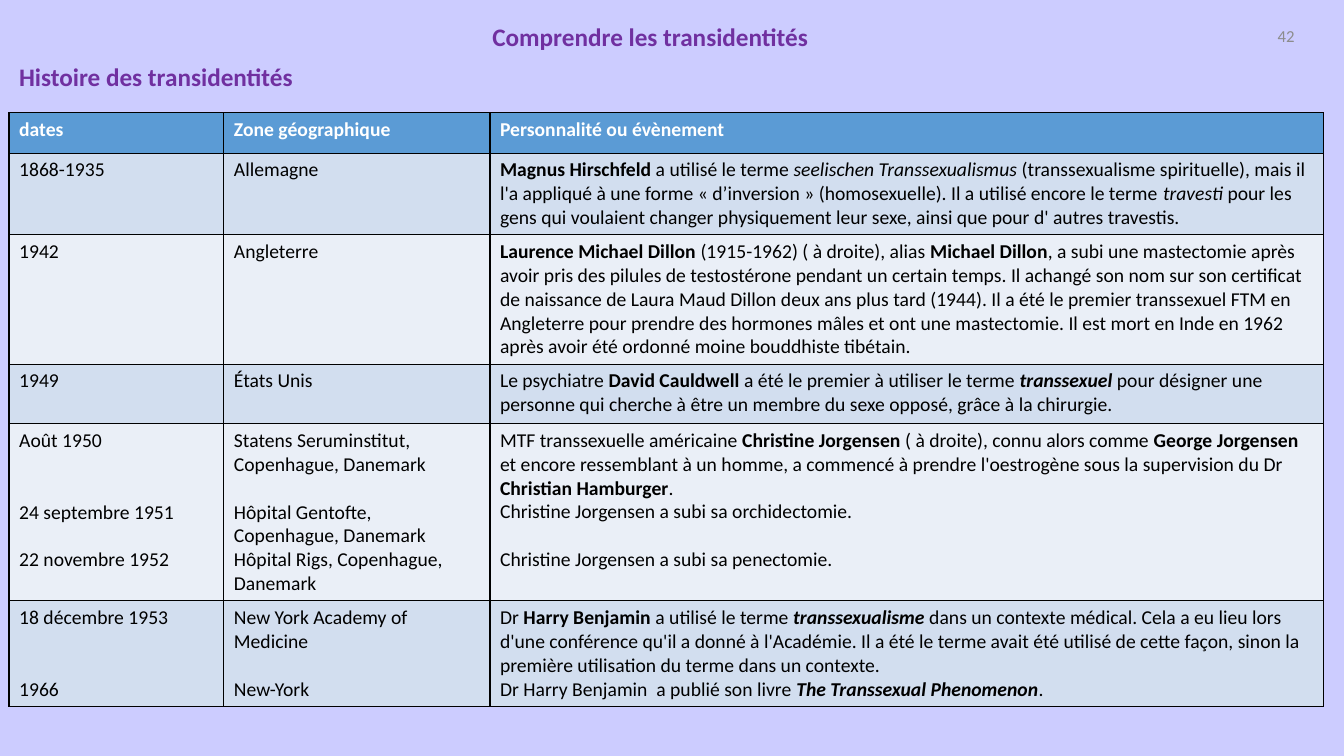
from lxml import etree
from pptx import Presentation
from pptx.dml.color import RGBColor
from pptx.enum.text import MSO_ANCHOR, MSO_AUTO_SIZE, PP_ALIGN
from pptx.oxml.ns import qn
from pptx.util import Inches, Pt

LEFT, CENTER, RIGHT = PP_ALIGN.LEFT, PP_ALIGN.CENTER, PP_ALIGN.RIGHT
TOP, MIDDLE = MSO_ANCHOR.TOP, MSO_ANCHOR.MIDDLE
NO_FIT = MSO_AUTO_SIZE.NONE
FONT = "Calibri"
PURPLE, BLACK = "7030A0", "000000"
LINE = 17.1  # height of one table text line, in points


def color(code):
    return RGBColor.from_string(code)


def style(para, size, code, bold=False, align=LEFT):
    para.alignment = align
    font = para.font
    font.name, font.size, font.bold = FONT, Pt(size), bold
    font.color.rgb = color(code)


prs = Presentation()
prs.slide_width, prs.slide_height = Inches(13.33), Inches(7.5)
slide = prs.slides.add_slide(prs.slide_layouts[5])
slide.background.fill.solid()
slide.background.fill.fore_color.rgb = color("CCCCFF")

# Title, subtitle and page number
title = slide.shapes.title
sub, page = [slide.shapes.add_textbox(0, 0, 0, 0) for _ in range(2)]
heads = [
    (title, "Comprendre les transidentités", 4.75, 0.16, 3.4, 18, PURPLE, True, CENTER, TOP),
    (sub, "Histoire des transidentités", 0.09, 0.56, 6.42, 18, PURPLE, True, LEFT, TOP),
    (page, "42", 12.22, 0.16, 0.72, 12, "8C8C8C", False, RIGHT, MIDDLE),
]
for box, text, x, y, wide, size, code, bold, align, anchor in heads:
    box.left, box.top = Inches(x), Inches(y)
    box.width, box.height = Inches(wide), Inches(0.4)
    frame = box.text_frame
    frame.text = text
    frame.word_wrap = True
    frame.auto_size = NO_FIT
    frame.vertical_anchor = anchor
    style(frame.paragraphs[0], size, code, bold, align)

# Table text: *bold*, _italic_; a cell lists (blank lines above, text)
rows = [
    [[(0, "dates")], [(0, "Zone géographique")], [(0, "Personnalité ou évènement")]],
    [
        [(0, "1868-1935")],
        [(0, "Allemagne")],
        [(0, "*Magnus Hirschfeld* a utilisé le terme _seelischen Transsexualismus_ "
             "(transsexualisme spirituelle), mais il l'a appliqué à une forme "
             "« d’inversion » (homosexuelle). Il a utilisé encore le terme _travesti_ "
             "pour les gens qui voulaient changer physiquement leur sexe, ainsi que "
             "pour d' autres travestis.")],
    ],
    [
        [(0, "1942")],
        [(0, "Angleterre")],
        [(0, "*Laurence Michael Dillon* (1915-1962) ( à droite), alias *Michael Dillon*, "
             "a subi une mastectomie après avoir pris des pilules de testostérone pendant "
             "un certain temps. Il achangé son nom sur son certificat de naissance de "
             "Laura Maud Dillon deux ans plus tard (1944). Il a été le premier transsexuel "
             "FTM en Angleterre pour prendre des hormones mâles et ont une mastectomie. "
             "Il est mort en Inde en 1962 après avoir été ordonné moine bouddhiste tibétain.")],
    ],
    [
        [(0, "1949")],
        [(0, "États Unis")],
        [(0, "Le psychiatre *David Cauldwell* a été le premier à utiliser le terme "
             "*_transsexuel_* pour désigner une personne qui cherche à être un membre "
             "du sexe opposé, grâce à la chirurgie.")],
    ],
    [
        [(0, "Août 1950"), (2, "24 septembre 1951"), (1, "22 novembre 1952")],
        [(0, "Statens Seruminstitut, Copenhague, Danemark"),
         (1, "Hôpital Gentofte, Copenhague, Danemark"),
         (0, "Hôpital Rigs, Copenhague, Danemark")],
        [(0, "MTF transsexuelle américaine *Christine Jorgensen* ( à droite), connu alors "
             "comme *George Jorgensen* et encore ressemblant à un homme, a commencé à "
             "prendre l'oestrogène sous la supervision du Dr *Christian Hamburger*."),
         (0, "Christine Jorgensen a subi sa orchidectomie."),
         (1, "Christine Jorgensen a subi sa penectomie.")],
    ],
    [
        [(0, "18 décembre 1953"), (2, "1966")],
        [(0, "New York Academy of Medicine"), (1, "New-York")],
        [(0, "Dr *Harry Benjamin* a utilisé le terme *_transsexualisme_* dans un contexte "
             "médical. Cela a eu lieu lors d'une conférence qu'il a donné à l'Académie. "
             "Il a été le terme avait été utilisé de cette façon, sinon la première "
             "utilisation du terme dans un contexte."),
         (0, "Dr Harry Benjamin  a publié son livre *_The Transsexual Phenomenon_*.")],
    ],
]
widths = [2.13, 2.64, 8.27]
heights = [0.4, 0.8, 1.27, 0.59, 1.73, 1.04]

# Table
table = slide.shapes.add_table(
    len(rows), len(widths), Inches(0.09), Inches(1.12),
    Inches(sum(widths)), Inches(sum(heights))).table
for col, wide in zip(table.columns, widths):
    col.width = Inches(wide)
for r, (row, high) in enumerate(zip(rows, heights)):
    table.rows[r].height = Inches(high)
    band = "5B9BD5" if r == 0 else ("EAEFF7", "D2DEEF")[r % 2]
    for c, paras in enumerate(row):
        cell = table.cell(r, c)
        cell.fill.solid()
        cell.fill.fore_color.rgb = color(band)

        # Black border on each side, placed ahead of the fill
        props = cell._tc.get_or_add_tcPr()
        for n, side in enumerate(("lnL", "lnR", "lnT", "lnB")):
            edge = etree.Element(qn("a:" + side), w=str(Pt(1)))
            fill = etree.SubElement(edge, qn("a:solidFill"))
            etree.SubElement(fill, qn("a:srgbClr"), val=BLACK)
            props.insert(n, edge)

        # Paragraphs with bold and italic runs
        frame = cell.text_frame
        for n, (blank, text) in enumerate(paras):
            para = frame.add_paragraph() if n else frame.paragraphs[0]
            style(para, 14, BLACK if r else "FFFFFF", r == 0)
            para.space_before = Pt(blank * LINE)
            for b, chunk in enumerate(text.split("*")):
                for i, part in enumerate(chunk.split("_")):
                    if part:
                        run = para.add_run()
                        run.text = part
                        if b % 2:
                            run.font.bold = True
                        if i % 2:
                            run.font.italic = True

prs.save("out.pptx")
